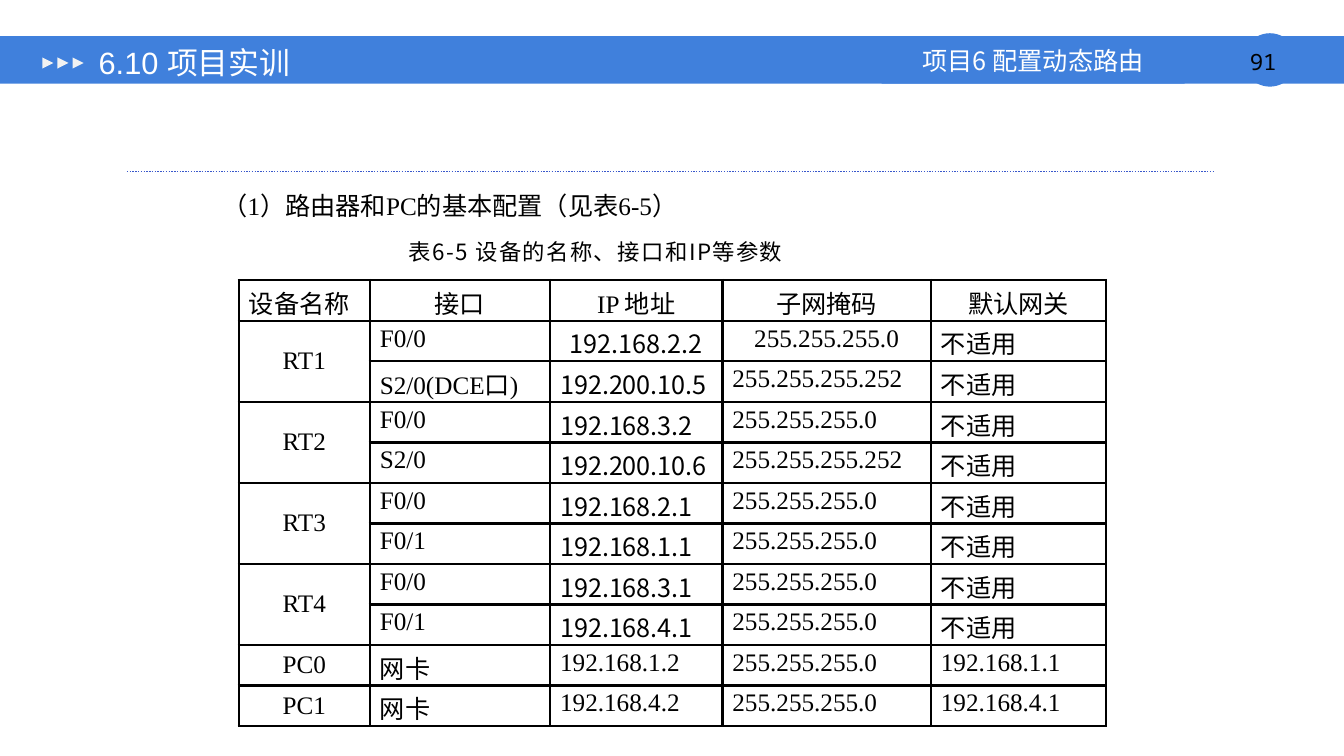
from dataclasses import dataclass

from lxml import etree
from pptx import Presentation
from pptx.dml.color import RGBColor
from pptx.enum.dml import MSO_LINE
from pptx.enum.shapes import MSO_CONNECTOR, MSO_SHAPE
from pptx.enum.text import MSO_ANCHOR, PP_ALIGN
from pptx.oxml.ns import qn
from pptx.shapes.autoshape import Shape
from pptx.shapes.shapetree import SlideShapes
from pptx.table import _Cell
from pptx.text.text import TextFrame, _Paragraph
from pptx.util import Inches, Pt

LEFT, CENTER, JUSTIFY = PP_ALIGN.LEFT, PP_ALIGN.CENTER, PP_ALIGN.JUSTIFY
TOP, MIDDLE = MSO_ANCHOR.TOP, MSO_ANCHOR.MIDDLE
RECTANGLE, OVAL = MSO_SHAPE.RECTANGLE, MSO_SHAPE.OVAL
TRIANGLE = MSO_SHAPE.ISOSCELES_TRIANGLE
STRAIGHT = MSO_CONNECTOR.STRAIGHT
DOTTED = MSO_LINE.ROUND_DOT


@dataclass(frozen=True)
class Theme:
    blue: str = "4080DC"
    rule: str = "3958CB"
    arrow: str = "F2F2F2"
    white: str = "FFFFFF"
    black: str = "000000"
    sans: str = "Noto Sans CJK SC"
    serif: str = "Times New Roman"
    mono: str = "Noto Sans Mono"
    title_font: str = "Arial"
    title_size: int = 22
    body_size: int = 18
    small_size: int = 16


THEME = Theme()


@dataclass(frozen=True)
class Box:
    left: float
    top: float
    width: float
    height: float


@dataclass(frozen=True)
class Band:
    box: Box
    preset: MSO_SHAPE
    color: str
    rotation: int = 0


@dataclass(frozen=True)
class Label:
    box: Box
    text: str
    font: str
    size: int
    color: str = THEME.black
    align: PP_ALIGN = LEFT
    anchor: MSO_ANCHOR = TOP
    insets: tuple[float, float] = (0.1, 0.05)
    indent: float = 0
    spacing: int = 0


@dataclass(frozen=True)
class Port:
    device: str
    interface: str
    address: str
    mask: str
    gateway: str


SHORT_MASK, LINK_MASK = "255.255.255.0", "255.255.255.252"
NO_GATEWAY = "不适用"
ARROWS = [Band(Box(0.42 + 0.15 * i, 0.57, 0.11, 0.11), TRIANGLE, THEME.arrow, 90)
          for i in range(3)]
BANDS = [
    Band(Box(0, 0.36, 13.34, 0.47), RECTANGLE, THEME.blue),
    Band(Box(0, 0.84, 13.34, 0.08), RECTANGLE, THEME.white),
    Band(Box(12.34, 0.33, 0.53, 0.53), OVAL, THEME.blue),
    Band(Box(8.75, 0.36, 3.01, 0.47), RECTANGLE, THEME.blue),
    *ARROWS,
]
LABELS = [
    Label(Box(12.34, 0.48, 0.53, 0.27), "91 ", THEME.mono, THEME.small_size,
          align=CENTER, insets=(0, 0)),
    Label(Box(8.75, 0.36, 3.01, 0.47), "项目6 配置动态路由", THEME.sans, THEME.body_size,
          THEME.white, CENTER, MIDDLE),
    Label(Box(0.85, 0.4, 7.2, 0.44), "6.10 项目实训", THEME.title_font, THEME.title_size,
          THEME.white, anchor=MIDDLE, insets=(0.13, 0.07)),
    Label(Box(1.5, 1.84, 10.56, 0.93), "（1）路由器和PC的基本配置（见表6-5）", THEME.serif,
          THEME.body_size, align=JUSTIFY, indent=0.61),
    Label(Box(3.96, 2.31, 5.08, 0.77), "表6-5 设备的名称、接口和IP等参数", THEME.sans,
          THEME.small_size, spacing=100),
]
HEADINGS = Port("设备名称", "接口", "IP 地址", "子网掩码", "默认网关")
PORTS = [
    Port("RT1", "F0/0", "192.168.2.2", SHORT_MASK, NO_GATEWAY),
    Port("RT1", "S2/0(DCE口)", "192.200.10.5", LINK_MASK, NO_GATEWAY),
    Port("RT2", "F0/0", "192.168.3.2", SHORT_MASK, NO_GATEWAY),
    Port("RT2", "S2/0", "192.200.10.6", LINK_MASK, NO_GATEWAY),
    Port("RT3", "F0/0", "192.168.2.1", SHORT_MASK, NO_GATEWAY),
    Port("RT3", "F0/1", "192.168.1.1", SHORT_MASK, NO_GATEWAY),
    Port("RT4", "F0/0", "192.168.3.1", SHORT_MASK, NO_GATEWAY),
    Port("RT4", "F0/1", "192.168.4.1", SHORT_MASK, NO_GATEWAY),
    Port("PC0", "网卡", "192.168.1.2", SHORT_MASK, "192.168.1.1"),
    Port("PC1", "网卡", "192.168.4.2", SHORT_MASK, "192.168.4.1"),
]
COLUMN_WIDTHS = [1.3, 1.79, 1.71, 2.07, 1.74]
ROW_HEIGHT = 0.4


def style_paragraph(paragraph: _Paragraph, font: str, size: int, color: str,
                    align: PP_ALIGN, spacing: int = 0) -> None:
    paragraph.alignment = align
    paragraph.font.name = font
    paragraph.font.size = Pt(size)
    paragraph.font.color.rgb = RGBColor.from_string(color)
    defaults = paragraph._p.pPr.find(qn("a:defRPr"))
    etree.SubElement(defaults, qn("a:ea"), typeface=THEME.sans)
    if spacing:
        defaults.set("spc", str(spacing))


def place(box: Box) -> list[int]:
    return [Inches(side) for side in (box.left, box.top, box.width, box.height)]


def draw_band(shapes: SlideShapes, band: Band) -> Shape:
    shape = shapes.add_shape(band.preset, *place(band.box))
    shape.shadow.inherit = False
    shape.fill.solid()
    shape.fill.fore_color.rgb = RGBColor.from_string(band.color)
    shape.line.fill.background()
    shape.rotation = band.rotation
    return shape


def draw_label(shapes: SlideShapes, label: Label) -> None:
    frame: TextFrame = shapes.add_textbox(*place(label.box)).text_frame
    frame.word_wrap = True
    frame.vertical_anchor = label.anchor
    frame.margin_left = frame.margin_right = Inches(label.insets[0])
    frame.margin_top = frame.margin_bottom = Inches(label.insets[1])
    paragraph = frame.paragraphs[0]
    paragraph.text = label.text
    style_paragraph(paragraph, label.font, label.size, label.color, label.align, label.spacing)
    if label.indent:
        paragraph._p.pPr.set("marL", str(Inches(label.indent)))


def draw_divider(shapes: SlideShapes) -> None:
    divider = shapes.add_connector(STRAIGHT, Inches(1.26), Inches(1.7), Inches(12.06), Inches(1.7))
    divider.line.color.rgb = RGBColor.from_string(THEME.rule)
    divider.line.width = Pt(1)
    divider.line.dash_style = DOTTED
    etree.SubElement(divider._element.spPr, qn("a:effectLst"))


def add_borders(cell: _Cell) -> None:
    cell.fill.background()
    properties = cell._tc.get_or_add_tcPr()
    for position, side in enumerate(("lnL", "lnR", "lnT", "lnB")):
        border = etree.Element(qn(f"a:{side}"), w=str(Pt(2)))
        fill = etree.SubElement(border, qn("a:solidFill"))
        etree.SubElement(fill, qn("a:srgbClr"), val=THEME.black)
        properties.insert(position, border)


def draw_ports(shapes: SlideShapes) -> None:
    rows = [HEADINGS, *PORTS]
    box = Box(2.37, 2.78, sum(COLUMN_WIDTHS), ROW_HEIGHT * len(rows))
    table = shapes.add_table(len(rows), len(COLUMN_WIDTHS), *place(box)).table
    table.first_row = table.horz_banding = False
    for column, width in zip(table.columns, COLUMN_WIDTHS):
        column.width = Inches(width)
    for r, port in enumerate(rows):
        table.rows[r].height = Inches(ROW_HEIGHT)
        repeated = r > 0 and port.device == rows[r - 1].device
        values = (port.device, port.interface, port.address, port.mask, port.gateway)
        for c, value in enumerate(values):
            cell = table.cell(r, c)
            add_borders(cell)
            is_device = c == 0 and r > 0
            cell.vertical_anchor = MIDDLE if is_device else TOP
            cell.margin_top = Inches(0 if is_device else 0.04)
            cell.margin_bottom = 0
            centered = is_device or (r == 0 and c > 0) or (r == 1 and c in (2, 3))
            is_router_address = c == 2 and port.device.startswith("RT")
            paragraph = cell.text_frame.paragraphs[0]
            paragraph.text = "" if c == 0 and repeated else value
            style_paragraph(paragraph, THEME.sans if is_router_address else THEME.serif,
                            THEME.body_size, THEME.black, CENTER if centered else LEFT)
        if repeated:
            table.cell(r - 1, 0).merge(table.cell(r, 0))


def main() -> None:
    presentation = Presentation()
    presentation.slide_width = Inches(13.34)
    presentation.slide_height = Inches(7.5)
    shapes = presentation.slides.add_slide(presentation.slide_layouts[6]).shapes
    for band in BANDS:
        draw_band(shapes, band)
    draw_divider(shapes)
    draw_ports(shapes)
    for label in LABELS:
        draw_label(shapes, label)
    presentation.save("out.pptx")


if __name__ == "__main__":
    main()
